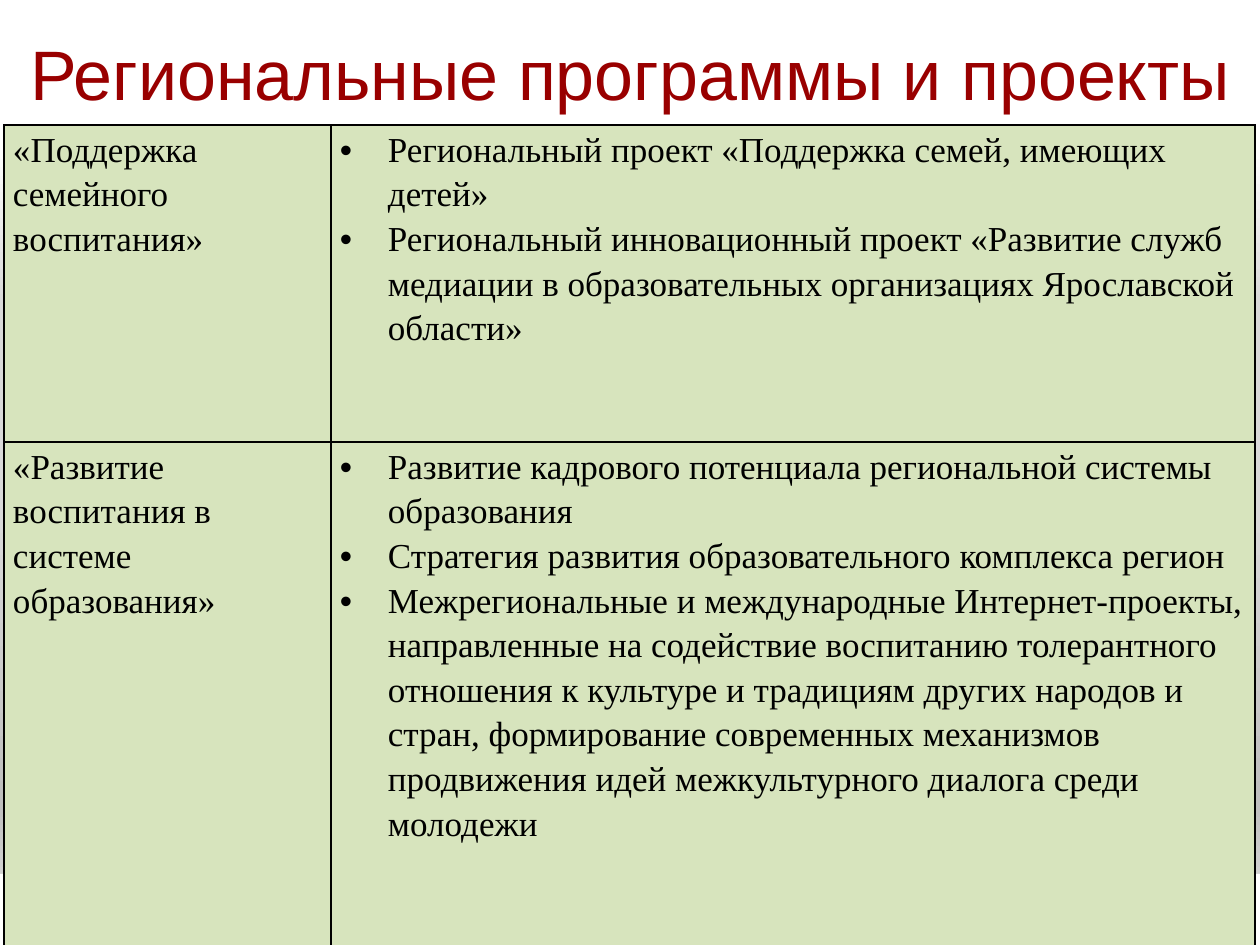
from lxml.etree import SubElement
from pptx import Presentation
from pptx.dml.color import RGBColor
from pptx.enum.shapes import MSO_SHAPE as Shape
from pptx.enum.text import MSO_ANCHOR as Anchor, PP_ALIGN as Align
from pptx.oxml.ns import qn
from pptx.util import Emu, Pt

COLORS = {"title": "990000", "text": "000000", "cell": "D7E4BD", "border": "000000", "bar": "FFFFFF"}
BACKGROUND_STOPS = [
    (0, "FFFFFF"), (15, "FFFFFF"), (32, "D9D9D9"),
    (54, "D9D9D9"), (85, "BFBFBF"), (100, "E6E6E6"),
]
COLUMN_WIDTHS = [327, 924]
ROW_HEIGHTS = [317, 507]
PROGRAMS = [
    ("«Поддержка семейного воспитания»", [
        "Региональный проект «Поддержка семей, имеющих детей»",
        "Региональный инновационный проект «Развитие служб медиации в "
        "образовательных организациях Ярославской области»",
    ]),
    ("«Развитие воспитания в системе образования»", [
        "Развитие кадрового потенциала региональной системы образования",
        "Стратегия развития образовательного комплекса регион",
        "Межрегиональные и международные Интернет-проекты, направленные на "
        "содействие воспитанию толерантного отношения к культуре и традициям "
        "других народов и стран, формирование современных механизмов "
        "продвижения идей межкультурного диалога среди молодежи",
    ]),
]


def px(count):
    """Turn pixels into EMU at 126 pixels to the inch."""
    return Emu(round(count * 914400 / 126))


def rgb(name):
    """Look up a named colour."""
    return RGBColor.from_string(COLORS[name])


def add_line_fill(line, name):
    """Give a line element a solid colour."""
    fill = SubElement(line, qn("a:solidFill"))
    SubElement(fill, qn("a:srgbClr"), val=COLORS[name])


def paint_background(page):
    """Fill the page with a vertical gradient of several stops."""
    fill = page.background.fill
    fill.gradient()
    fill.gradient_angle = 270
    stops = page._element.find(".//" + qn("a:gsLst"))
    for stop in list(stops):
        stops.remove(stop)
    for percent, color in BACKGROUND_STOPS:
        stop = SubElement(stops, qn("a:gs"), pos=str(percent * 1000))
        SubElement(stop, qn("a:srgbClr"), val=color)


def add_bar(page):
    """Add the white bar along the bottom edge."""
    bar = page.shapes.add_shape(Shape.RECTANGLE, 0, px(874), px(1261), px(73))
    bar.shadow.inherit = False
    bar.fill.solid()
    bar.fill.fore_color.rgb = rgb("bar")
    bar.line.fill.background()


def set_title(page, text):
    """Place and format the title on its white band."""
    title = page.shapes.title
    title.left, title.top, title.width, title.height = 0, 0, px(1260), px(145)
    title.fill.solid()
    title.fill.fore_color.rgb = rgb("bar")
    frame = title.text_frame
    frame.vertical_anchor = Anchor.MIDDLE
    para = frame.paragraphs[0]
    para.alignment = Align.CENTER
    span = para.add_run()
    span.text = text
    outline = SubElement(span._r.get_or_add_rPr(), qn("a:ln"), w=str(Pt(0.75)))
    add_line_fill(outline, "title")
    span.font.name, span.font.size = "Arial", Pt(40)
    span.font.color.rgb = rgb("title")


def format_cell(cell):
    """Set borders, fill and margins of a cell."""
    properties = cell._tc.get_or_add_tcPr()
    for side in "LRTB":
        add_line_fill(SubElement(properties, qn(f"a:ln{side}"), w=str(Pt(1))), "border")
    cell.fill.solid()
    cell.fill.fore_color.rgb = rgb("cell")
    cell.margin_left = cell.margin_right = px(9)
    cell.margin_top = cell.margin_bottom = 0


def add_bullet(para):
    """Give a paragraph a hanging bullet."""
    properties = para._p.get_or_add_pPr()
    properties.set("marL", str(px(48)))
    properties.set("indent", str(-px(48)))
    SubElement(properties, qn("a:buFont"), typeface="Arial")
    SubElement(properties, qn("a:buChar"), char="•")


def write_cell(cell, texts, bulleted):
    """Write one paragraph for each text."""
    format_cell(cell)
    frame = cell.text_frame
    for index, text in enumerate(texts):
        para = frame.add_paragraph() if index else frame.paragraphs[0]
        para.text = text
        para.line_spacing = 1.15
        if bulleted:
            add_bullet(para)
        para.font.name, para.font.size = "Times New Roman", Pt(20)
        para.font.color.rgb = rgb("text")


def add_programs_table(page):
    """Add the table of programs and their projects."""
    table = page.shapes.add_table(
        len(ROW_HEIGHTS), len(COLUMN_WIDTHS), px(4), px(125),
        px(sum(COLUMN_WIDTHS)), px(sum(ROW_HEIGHTS)),
    ).table
    table.first_row = table.horz_banding = False
    for column, width in zip(table.columns, COLUMN_WIDTHS):
        column.width = px(width)
    for row, height, (program, projects) in zip(table.rows, ROW_HEIGHTS, PROGRAMS):
        row.height = px(height)
        write_cell(row.cells[0], [program], False)
        write_cell(row.cells[1], projects, True)


def main():
    """Build the slide and save the deck."""
    deck = Presentation()
    deck.slide_width, deck.slide_height = px(1260), px(945)
    page = deck.slides.add_slide(deck.slide_layouts[5])
    paint_background(page)
    add_bar(page)
    set_title(page, "Региональные программы и проекты")
    add_programs_table(page)
    deck.save("out.pptx")


if __name__ == "__main__":
    main()
